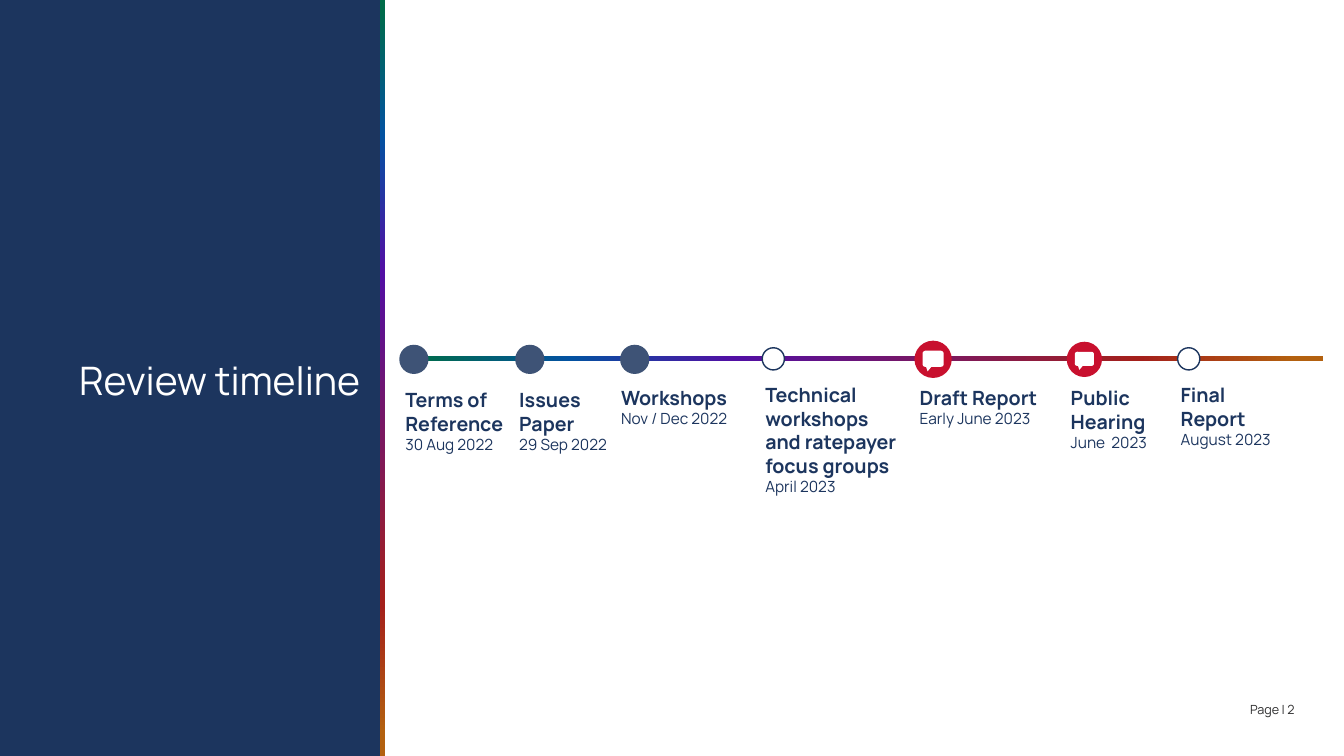
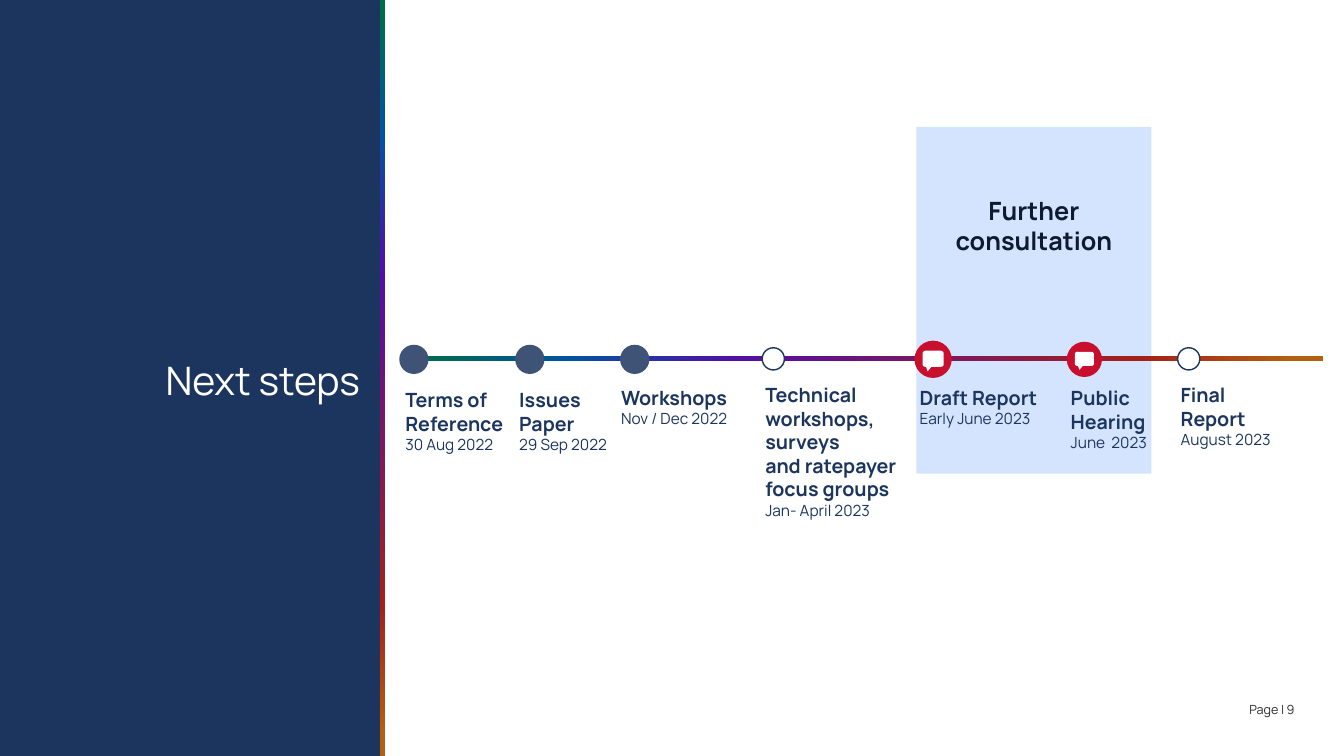
from copy import deepcopy

from pptx import Presentation
from pptx.dml.color import RGBColor
from pptx.enum.shapes import MSO_SHAPE
from pptx.enum.text import MSO_ANCHOR, MSO_AUTO_SIZE, PP_ALIGN
from pptx.util import Pt

RECT, OVAL = MSO_SHAPE.RECTANGLE, MSO_SHAPE.OVAL
BUBBLE = MSO_SHAPE.ROUNDED_RECTANGULAR_CALLOUT
TOP, MIDDLE = MSO_ANCHOR.TOP, MSO_ANCHOR.MIDDLE
LEFT, CENTER, RIGHT = PP_ALIGN.LEFT, PP_ALIGN.CENTER, PP_ALIGN.RIGHT
FIXED_SIZE = MSO_AUTO_SIZE.NONE

EMU_PER_PX = 9144  # 100 px to the inch
SLIDE_WIDTH, SLIDE_HEIGHT = 1333, 750
TITLE_ONLY_LAYOUT = 5

FONT = "Manrope"
NAVY, SLATE, RED, WHITE = "1C355E", "3E5376", "C8102E", "FFFFFF"
PALE_BLUE, INK, GREY = "D4E4FE", "0E1B2F", "2E2E2F"
SPECTRUM = [(0.01, "006C49"), (0.18, "0352A1"), (0.36, "520FA4"),
            (0.58, "7B185F"), (0.80, "A4201B"), (0.97, "B3610F")]

TITLE = dict(size=Pt(28), bold=False, color=WHITE)
NAME = dict(size=Pt(14), bold=True, color=NAVY)
DATE = dict(size=Pt(11), bold=False, color=NAVY)
CALLOUT = dict(size=Pt(18), bold=True, color=INK)
PAGE = dict(size=Pt(9), bold=False, color=GREY)

AXIS_Y = 356
DISCS = {  # diameter, fill, outline
    "done": (29, SLATE, None),
    "open": (22, WHITE, NAVY),
    "consult": (37, RED, None),
    "hearing": (35, RED, None),
}
# Tick outline in tenths of a px
TICK = [(135, 0), (150, 18), (150, 28), (62, 115), (48, 115), (0, 62),
        (0, 50), (16, 36), (30, 36), (55, 65), (122, 2)]


def px(length):
    return round(length * EMU_PER_PX)


def rgb(hex_color):
    return RGBColor.from_string(hex_color)


class Deck:
    def __init__(self):
        self.presentation = Presentation()
        self.presentation.slide_width = px(SLIDE_WIDTH)
        self.presentation.slide_height = px(SLIDE_HEIGHT)
        self.slide = None

    def new_slide(self, heading, page):
        """Start a slide with its title panel, spectrum edge and page number."""
        layout = self.presentation.slide_layouts[TITLE_ONLY_LAYOUT]
        self.slide = self.presentation.slides.add_slide(layout)
        self.title(heading)
        self.spectrum(377, 0, 5, SLIDE_HEIGHT, 270)
        self.text(984, 696, 300, 15, [(f"Page | {page}", PAGE)], RIGHT, MIDDLE)

    def title(self, heading):
        panel = self.slide.shapes.title
        place = dict(left=0, top=0, width=377, height=SLIDE_HEIGHT)
        for side, length in place.items():
            setattr(panel, side, px(length))
        self.paint(panel, NAVY)
        self.fill_text(panel.text_frame, [(heading, TITLE)], RIGHT, MIDDLE,
                       (10, 5, 20, 5))
        panel.text_frame.paragraphs[0].line_spacing = Pt(36)

    def fill_text(self, frame, lines, align=LEFT, anchor=TOP, margins=(0, 0, 0, 0)):
        """Fill a text frame with one paragraph for each (text, style) pair."""
        left, top, right, bottom = map(px, margins)
        layout = dict(word_wrap=True, auto_size=FIXED_SIZE, vertical_anchor=anchor,
                      margin_left=left, margin_top=top,
                      margin_right=right, margin_bottom=bottom)
        for attribute, value in layout.items():
            setattr(frame, attribute, value)
        for index, (words, style) in enumerate(lines):
            paragraph = frame.add_paragraph() if index else frame.paragraphs[0]
            paragraph.alignment = align
            run = paragraph.add_run()
            run.text = words
            run.font.name = FONT
            run.font.color.rgb = rgb(style["color"])
            for attribute in ("size", "bold"):
                setattr(run.font, attribute, style[attribute])

    def text(self, left, top, width, height, lines, align=LEFT, anchor=TOP):
        box = self.slide.shapes.add_textbox(*map(px, (left, top, width, height)))
        self.fill_text(box.text_frame, lines, align, anchor)

    def paint(self, shape, fill, outline=None):
        shape.fill.solid()
        shape.fill.fore_color.rgb = rgb(fill)
        if outline:
            shape.line.color.rgb = rgb(outline)
            shape.line.width = Pt(1)
        else:
            shape.line.fill.background()

    def shape(self, kind, left, top, width, height, fill, outline=None, parent=None):
        shapes = parent or self.slide.shapes
        drawn = shapes.add_shape(kind, *map(px, (left, top, width, height)))
        drawn.shadow.inherit = False
        self.paint(drawn, fill, outline)
        return drawn

    def spectrum(self, left, top, width, height, angle):
        """Draw a bar that runs through all spectrum colours."""
        bar = self.shape(RECT, left, top, width, height, NAVY)
        bar.fill.gradient()
        bar.fill.gradient_angle = angle
        first = bar.fill.gradient_stops[0]._gs
        stop_list = first.getparent()
        for _ in SPECTRUM[2:]:
            stop_list.append(deepcopy(first))
        for stop, (position, color) in zip(bar.fill.gradient_stops, SPECTRUM):
            stop.position = position
            stop.color.rgb = rgb(color)

    def marker(self, status, left):
        """Draw a disc on the axis, with a tick or a speech bubble by status."""
        size, fill, outline = DISCS[status]
        top = AXIS_Y - size // 2
        if status == "open":
            self.shape(OVAL, left, top, size, size, fill, outline)
            return
        parts = self.slide.shapes.add_group_shape().shapes
        self.shape(OVAL, left, top, size, size, fill, parent=parts)
        if status == "done":
            outline_builder = parts.build_freeform(*TICK[0], scale=EMU_PER_PX / 10)
            outline_builder.add_line_segments(TICK[1:])
            tick = outline_builder.convert_to_shape(px(left + 6), px(top + 8))
            tick.shadow.inherit = False
            self.paint(tick, WHITE)
        else:
            bubble = self.shape(BUBBLE, left + 8, top + 10, size - 16, size - 21,
                                WHITE, parent=parts)
            for index, value in enumerate((-0.26, 0.78, 0.17)):
                bubble.adjustments[index] = value

    def highlight(self, left, top, width, height, words):
        area = self.shape(RECT, left, top, width, height, PALE_BLUE)
        self.fill_text(area.text_frame, [(words, CALLOUT)], CENTER, TOP,
                       (10, 68, 10, 5))

    def timeline(self, milestones):
        self.spectrum(402, 353, 910, 5, 0)
        for status, disc_left, label_left, label_top, width, names, date in milestones:
            self.marker(status, disc_left)
            lines = [(name, NAME) for name in names] + [(date, DATE)]
            self.text(label_left, label_top, width, 90, lines)


def review_milestones(workshop_names, workshop_date):
    """List status, disc left, label left, top and width, names and date."""
    return [
        ("done", 396, 402, 385, 113, ["Terms of Reference"], "30 Aug 2022"),
        ("done", 511, 515, 385, 113, ["Issues Paper"], "29 Sep 2022"),
        ("done", 615, 616, 383, 112, ["Workshops"], "Nov / Dec 2022"),
        ("open", 756, 759, 380, 138, workshop_names, workshop_date),
        ("consult", 907, 912, 383, 118, ["Draft Report"], "Early June 2023"),
        ("hearing", 1058, 1062, 383, 80, ["Public Hearing"], "June  2023"),
        ("open", 1168, 1171, 380, 98, ["Final Report"], "August 2023"),
    ]


def main():
    deck = Deck()

    deck.new_slide("Review timeline", 2)
    deck.timeline(review_milestones(
        ["Technical workshops", "and ratepayer focus groups"], "April 2023"))

    deck.new_slide("Next steps", 9)
    deck.highlight(909, 126, 233, 344, "Further consultation")
    deck.timeline(review_milestones(
        ["Technical workshops,", "surveys", "and ratepayer focus groups"],
        "Jan- April 2023"))

    deck.presentation.save("out.pptx")


if __name__ == "__main__":
    main()
